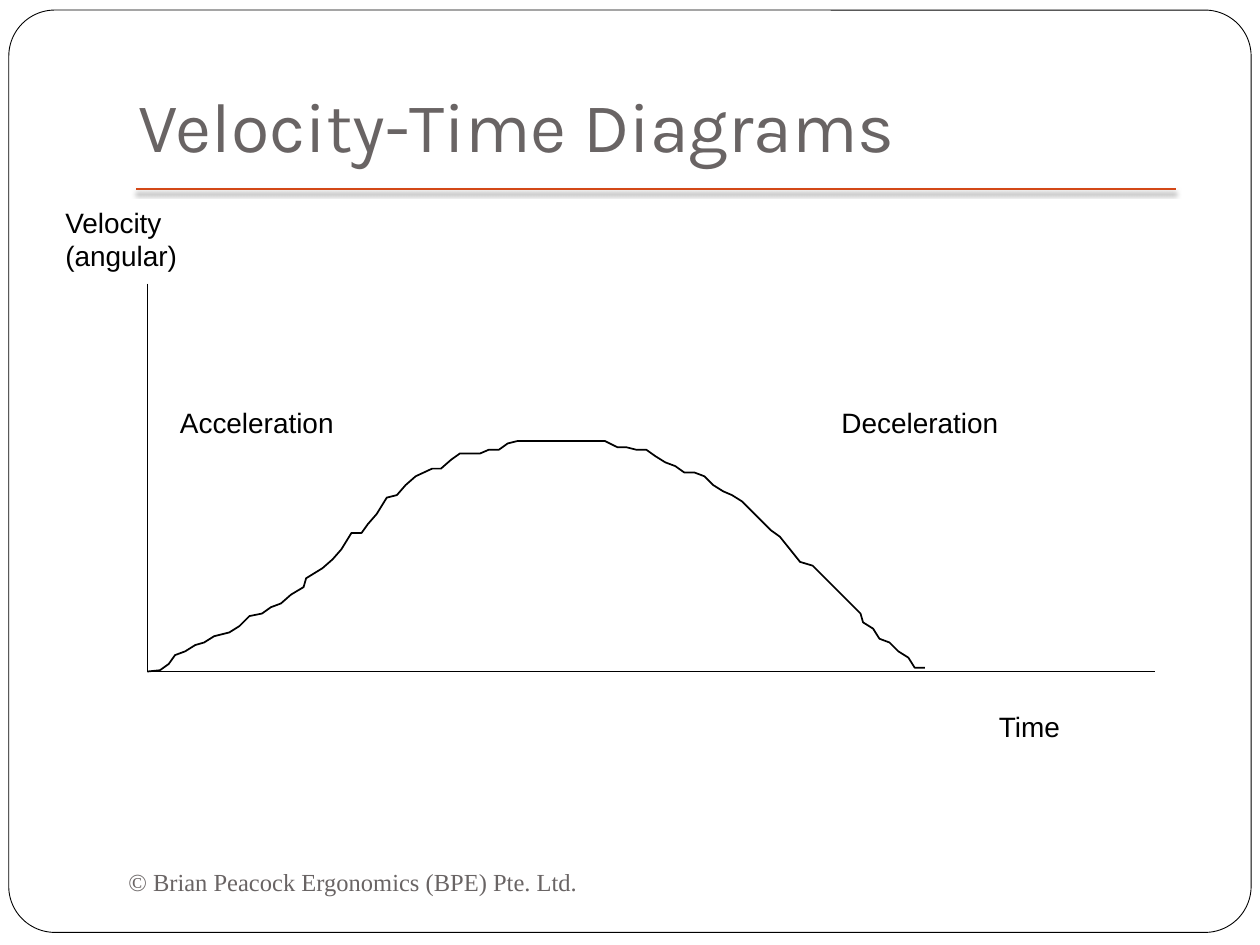
"""Build the velocity-time diagram slide."""
import lxml.etree
import pptx
import pptx.dml.color
import pptx.enum.shapes
import pptx.enum.text
import pptx.oxml.ns
import pptx.util

PX = 9144
COLOURS = {"paper": "FFFFFF", "ink": "000000", "muted": "696464", "rule": "D34817"}
CURVE = [
    (117, 533), (127, 532), (134, 527), (139, 520), (147, 517), (155, 512),
    (162, 510), (170, 505), (182, 502), (190, 497), (198, 489), (208, 487),
    (215, 482), (223, 479), (231, 472), (241, 466), (243, 459), (256, 451),
    (264, 444), (271, 436), (279, 423), (287, 423), (292, 416), (299, 408),
    (307, 395), (315, 393), (322, 385), (330, 378), (343, 372), (350, 372),
    (358, 365), (365, 360), (381, 360), (388, 357), (396, 357), (403, 352),
    (411, 350), (480, 350), (490, 355), (497, 355), (505, 357), (513, 357),
    (520, 362), (528, 367), (536, 370), (543, 375), (551, 375), (559, 378),
    (566, 385), (574, 390), (581, 393), (589, 398), (597, 406), (604, 413),
    (612, 421), (619, 426), (627, 436), (635, 446), (645, 449), (652, 456),
    (660, 464), (668, 472), (675, 479), (683, 487), (685, 494), (693, 499),
    (698, 507), (706, 510), (713, 517), (721, 522), (726, 530), (734, 530),
]


class Diagram:
    def __init__(self, slide):
        self.slide = slide
        self.shapes = slide.shapes
        self.label = {"name": "Arial", "size": pptx.util.Pt(16)}
        self.heading = {"name": "Karla", "size": pptx.util.Pt(40)}
        self.credit = {"name": "Times New Roman", "size": pptx.util.Pt(14)}

    def colour(self, name):
        return pptx.dml.color.RGBColor.from_string(COLOURS[name])

    def outline(self, shape, colour="ink", width=1):
        shape.line.color.rgb = self.colour(colour)
        shape.line.width = pptx.util.Pt(width)

    def frame(self, left, top, width, height, rounding):
        shape = self.shapes.add_shape(
            pptx.enum.shapes.MSO_SHAPE.ROUNDED_RECTANGLE,
            left * PX, top * PX, width * PX, height * PX)
        shape.adjustments[0] = rounding
        shape.shadow.inherit = False
        shape.fill.solid()
        shape.fill.fore_color.rgb = self.colour("paper")
        self.outline(shape, width=0.5)

    def line(self, start, end, colour="ink", shadow=False):
        points = [value * PX for value in start + end]
        connector = self.shapes.add_connector(
            pptx.enum.shapes.MSO_CONNECTOR.STRAIGHT, *points)
        self.outline(connector, colour)
        qualified = pptx.oxml.ns.qn
        properties = connector.element.find(qualified("p:spPr"))
        effects = lxml.etree.SubElement(properties, qualified("a:effectLst"))
        if shadow:
            outer = lxml.etree.SubElement(
                effects, qualified("a:outerShdw"), blurRad="38100", dist="25400",
                dir="5400000", algn="t", rotWithShape="0")
            tint = lxml.etree.SubElement(
                outer, qualified("a:srgbClr"), val=COLOURS["ink"])
            lxml.etree.SubElement(tint, qualified("a:alpha"), val="50000")

    def curve(self, points):
        builder = self.shapes.build_freeform(*points[0], scale=PX)
        builder.add_line_segments(points[1:], close=False)
        shape = builder.convert_to_shape()
        shape.shadow.inherit = False
        shape.fill.background()
        self.outline(shape)

    def style_text(self, box, text, font, colour, layout):
        frame = box.text_frame
        frame.text = text
        for name, value in {"word_wrap": True, **layout}.items():
            setattr(frame, name, value)
        para = frame.paragraphs[0]
        para.alignment = pptx.enum.text.PP_ALIGN.LEFT
        span = para.runs[0]
        for name, value in font.items():
            setattr(span.font, name, value)
        span.font.color.rgb = self.colour(colour)

    def title(self, text, left, top, width, height):
        box = self.shapes.title
        place = {"left": left, "top": top, "width": width, "height": height}
        for name, value in place.items():
            setattr(box, name, value * PX)
        self.shapes.element.append(box.element)
        self.style_text(box, text, self.heading, "muted", {
            "vertical_anchor": pptx.enum.text.MSO_ANCHOR.BOTTOM,
            "auto_size": pptx.enum.text.MSO_AUTO_SIZE.NONE,
            "margin_bottom": 10 * PX})

    def text(self, text, left, top, width, height):
        box = self.shapes.add_textbox(left * PX, top * PX, width * PX, height * PX)
        self.style_text(box, text, self.label, "ink", {
            "auto_size": pptx.enum.text.MSO_AUTO_SIZE.SHAPE_TO_FIT_TEXT})

    def footer(self, text, left, top, width, height):
        box = self.shapes.add_textbox(left * PX, top * PX, width * PX, height * PX)
        self.style_text(box, text, self.credit, "muted", {
            "vertical_anchor": pptx.enum.text.MSO_ANCHOR.MIDDLE})


def main():
    deck = pptx.Presentation()
    deck.slide_width, deck.slide_height = 1000 * PX, 750 * PX
    page = Diagram(deck.slides.add_slide(deck.slide_layouts[5]))
    page.frame(7, 8, 986, 732, 0.05)
    page.line((108, 150), (933, 150), "rule", shadow=True)
    page.title("Velocity-Time Diagrams", 100, 17, 850, 125)
    origin = (117, 533)
    page.line(origin, (917, 533))
    page.line((117, 225), origin)
    page.text("Time", 783, 558, 134, 50)
    page.text("Velocity (angular)", 42, 158, 176, 90)
    page.curve(CURVE)
    page.text("Acceleration", 133, 317, 218, 50)
    page.text("Deceleration", 658, 317, 201, 50)
    page.footer("© Brian Peacock Ergonomics (BPE) Pte. Ltd.", 92, 675, 433, 50)
    deck.save("out.pptx")


if __name__ == "__main__":
    main()
